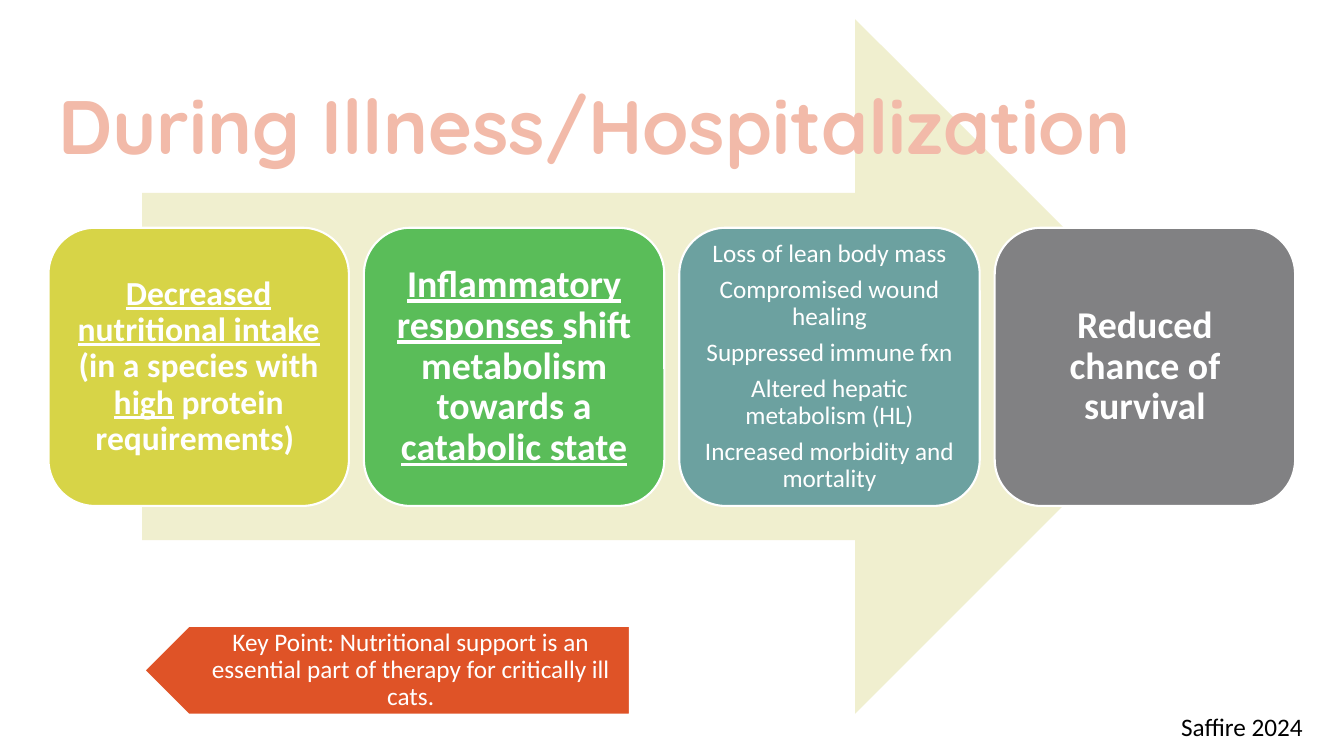
from dataclasses import dataclass

from lxml.etree import SubElement
from pptx import Presentation
from pptx.dml.color import RGBColor
from pptx.enum.shapes import MSO_SHAPE as Preset
from pptx.enum.text import MSO_ANCHOR as Anchor, MSO_AUTO_SIZE as AutoSize, PP_ALIGN as Align
from pptx.oxml.ns import qn
from pptx.shapes.autoshape import Shape
from pptx.slide import Slide
from pptx.util import Pt

WHITE = RGBColor(0xFF, 0xFF, 0xFF)
BLACK = RGBColor(0x00, 0x00, 0x00)
ORANGE = RGBColor(0xDF, 0x53, 0x27)
SALMON = RGBColor(0xF2, 0xBA, 0xA9)
CREAM = RGBColor(0xF0, 0xEF, 0xCF)
YELLOW = RGBColor(0xD7, 0xD4, 0x47)
GREEN = RGBColor(0x5A, 0xBD, 0x59)
TEAL = RGBColor(0x6C, 0xA1, 0xA0)
GREY = RGBColor(0x81, 0x81, 0x83)

CARD_LEFT, CARD_TOP, CARD_WIDTH, CARD_HEIGHT = 34.6, 162.7, 214.6, 198.7
CARD_STEP = 225.3


@dataclass(frozen=True)
class Span:
    text: str
    underline: bool = False


@dataclass(frozen=True)
class Style:
    size: float
    color: RGBColor = WHITE
    bold: bool = False
    font: str = "Calibri"
    align: Align = Align.CENTER
    line_spacing: float = 0.9
    space_after: float = 6.3


@dataclass(frozen=True)
class Card:
    fill: RGBColor
    style: Style
    inset: float
    paragraphs: list[list[Span]]


CARDS = [
    Card(YELLOW, Style(24, bold=True), 7.2, [[
        Span("Decreased nutritional intake ", True), Span("(in a species with "),
        Span("high", True), Span(" protein requirements) ")]]),
    Card(GREEN, Style(27, bold=True), 7.9, [[
        Span("Inflammatory responses ", True), Span("shift metabolism towards a "),
        Span("catabolic state", True)]]),
    Card(TEAL, Style(18), 5, [[Span(effect)] for effect in (
        "Loss of lean body mass", "Compromised wound healing", "Suppressed immune fxn",
        "Altered hepatic metabolism (HL)", "Increased morbidity and mortality")]),
    Card(GREY, Style(27, bold=True), 7.9, [[Span("Reduced chance of survival")]]),
]


def set_all(target: object, values: dict[str, object]) -> None:
    for name, value in values.items():
        setattr(target, name, value)


def place(box: Shape, left: float, top: float, width: float, height: float) -> None:
    set_all(box, {"left": Pt(left), "top": Pt(top), "width": Pt(width), "height": Pt(height)})


def write(box: Shape, paragraphs: list[list[Span]], style: Style, anchor: Anchor,
          insets: tuple[float, float, float, float] = (7.2, 3.6, 7.2, 3.6)) -> None:
    """Fill a box with styled text; insets run left, top, right, bottom."""
    left, top, right, bottom = map(Pt, insets)
    frame = box.text_frame
    set_all(frame, {"word_wrap": True, "auto_size": AutoSize.NONE, "vertical_anchor": anchor,
                    "margin_left": left, "margin_top": top,
                    "margin_right": right, "margin_bottom": bottom})
    for index, spans in enumerate(paragraphs):
        para = frame.add_paragraph() if index else frame.paragraphs[0]
        set_all(para, {"alignment": style.align, "line_spacing": style.line_spacing,
                       "space_before": Pt(0), "space_after": Pt(style.space_after)})
        for span in spans:
            run = para.add_run()
            run.text = span.text
            set_all(run.font, {"name": style.font, "size": Pt(style.size),
                               "bold": style.bold, "underline": span.underline})
            run.font.color.rgb = style.color


def add_block(page: Slide, preset: Preset, bounds: tuple[float, float, float, float],
              fill: RGBColor, outlined: bool = True) -> Shape:
    block = page.shapes.add_shape(preset, *map(Pt, bounds))
    block.shadow.inherit = False
    block.fill.solid()
    block.fill.fore_color.rgb = fill
    if outlined:
        block.line.color.rgb = WHITE
        block.line.width = Pt(1.5)
    else:
        block.line.fill.background()
    return block


def outline_text(box: Shape, color: RGBColor, width: float) -> None:
    for run in box.text_frame.paragraphs[0].runs:
        properties = run.font._element
        line = SubElement(properties, qn("a:ln"), w=str(Pt(width)))
        fill = SubElement(line, qn("a:solidFill"))
        SubElement(fill, qn("a:srgbClr"), val=str(color))
        properties.insert(0, line)


def add_key_point(page: Slide) -> None:
    banner = add_block(page, Preset.PENTAGON, (103, 447.1, 347, 63.4), ORANGE)
    banner.rotation = 180
    box = page.shapes.add_textbox(Pt(118.8), Pt(447.1), Pt(331.2), Pt(63.4))
    message = "Key Point: Nutritional support is an essential part of therapy for critically ill cats."
    write(box, [[Span(message)]], Style(18), Anchor.MIDDLE, (28, 5, 10, 5))


def add_cards(page: Slide) -> None:
    for index, card in enumerate(CARDS):
        bounds = (CARD_LEFT + index * CARD_STEP, CARD_TOP, CARD_WIDTH, CARD_HEIGHT)
        block = add_block(page, Preset.ROUNDED_RECTANGLE, bounds, card.fill)
        write(block, card.paragraphs, card.style, Anchor.MIDDLE, (card.inset,) * 4)


def add_title(page: Slide) -> None:
    title = page.shapes.title
    place(title, 34.6, 52.6, 891.4, 72.7)
    style = Style(54, SALMON, True, "Quicksand", Align.LEFT, 1.0, 0)
    write(title, [[Span("During Illness/Hospitalization")]], style, Anchor.TOP)
    outline_text(title, ORANGE, 1.75)


def main() -> None:
    deck = Presentation()
    set_all(deck, {"slide_width": Pt(960), "slide_height": Pt(540)})
    page = deck.slides.add_slide(deck.slide_layouts[5])
    add_title(page)
    arrow = add_block(page, Preset.RIGHT_ARROW, (101.5, 13.7, 757.4, 496.1), CREAM, outlined=False)
    page.shapes.title.element.addprevious(arrow.element)  # the title lies over the arrow
    add_key_point(page)
    add_cards(page)
    credit = page.shapes.add_textbox(Pt(836.6), Pt(504.7), Pt(123.1), Pt(28.8))
    write(credit, [[Span("Saffire 2024")]], Style(18, BLACK, align=Align.LEFT, line_spacing=1.0,
                                                  space_after=0), Anchor.TOP)
    deck.save("out.pptx")


if __name__ == "__main__":
    main()
